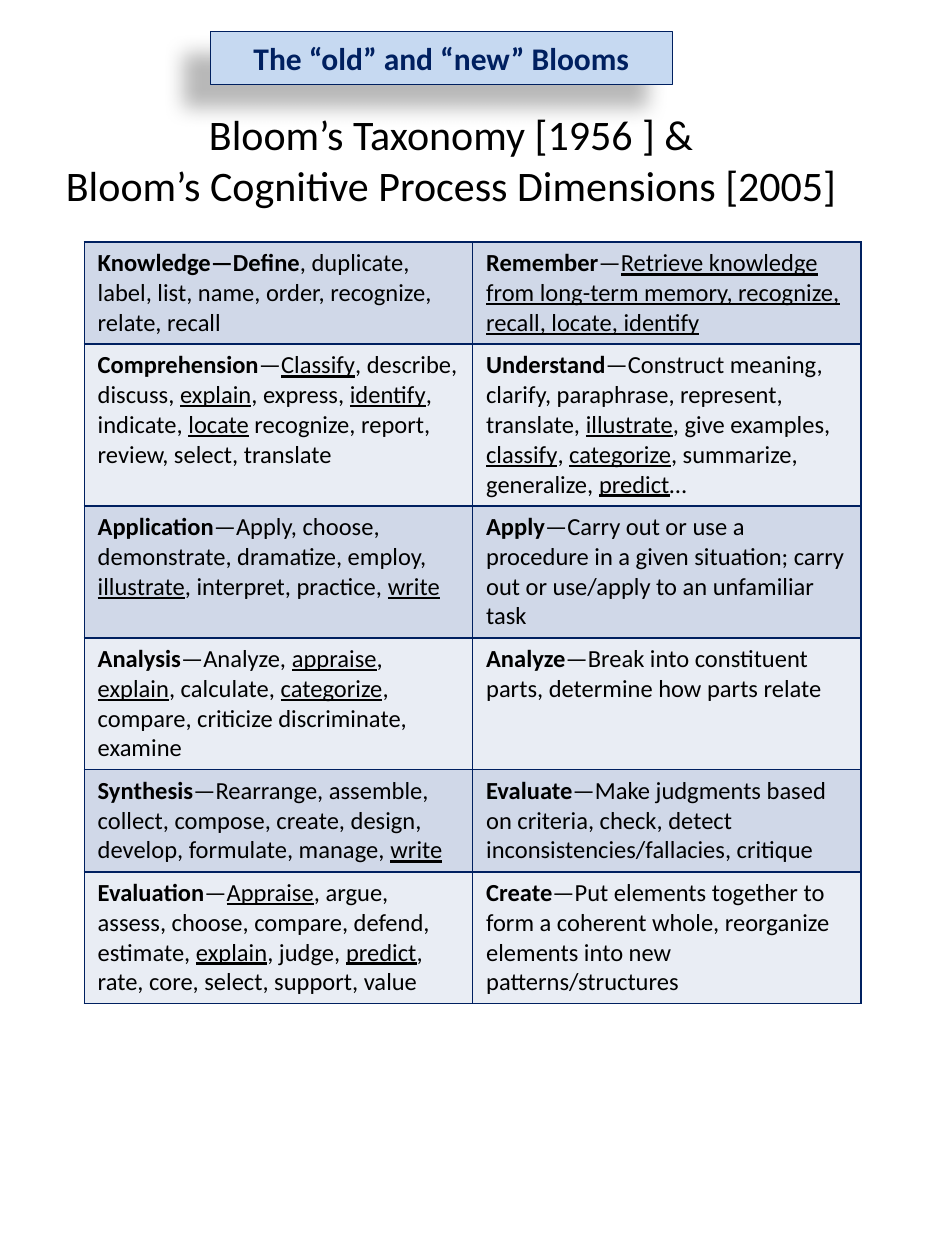
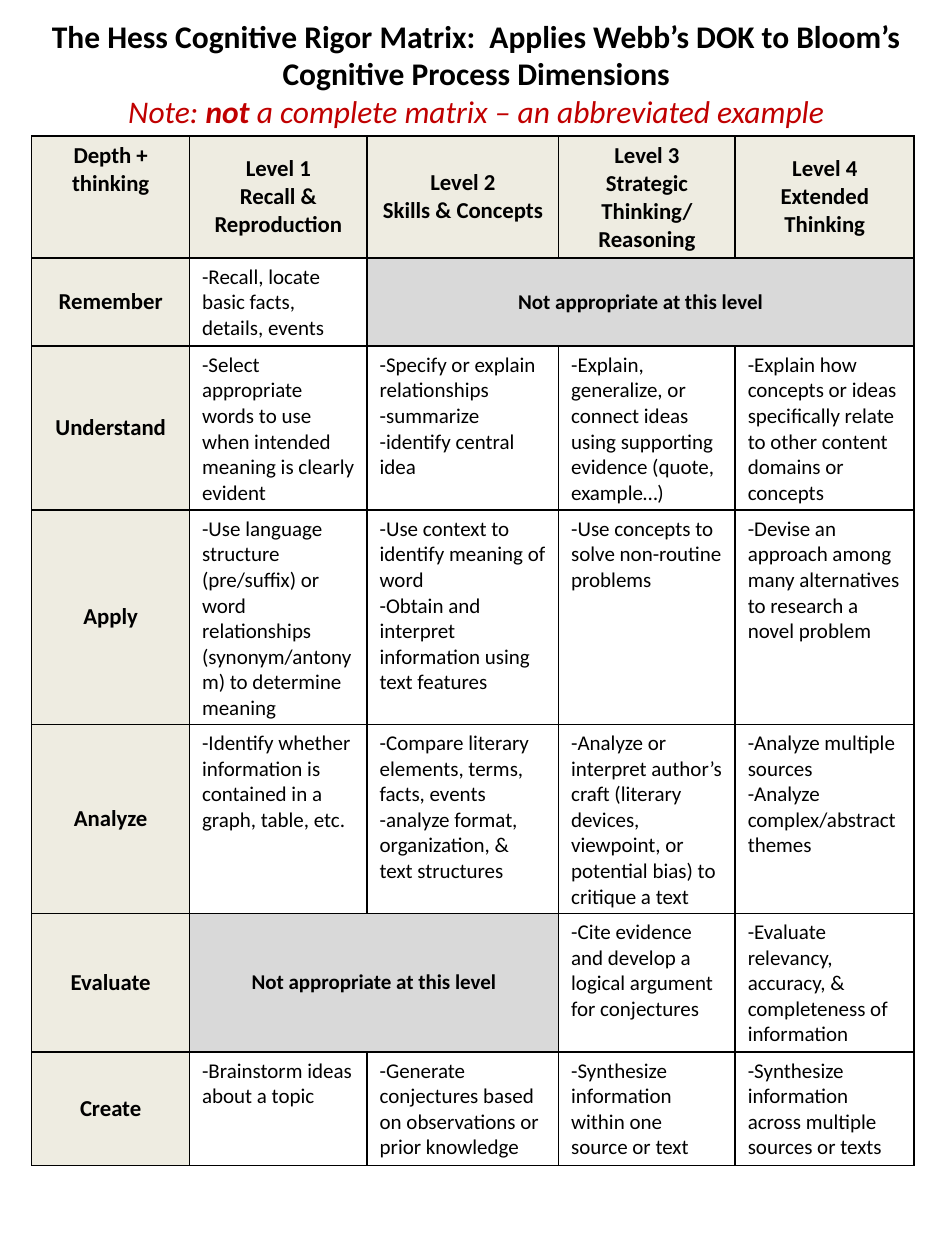
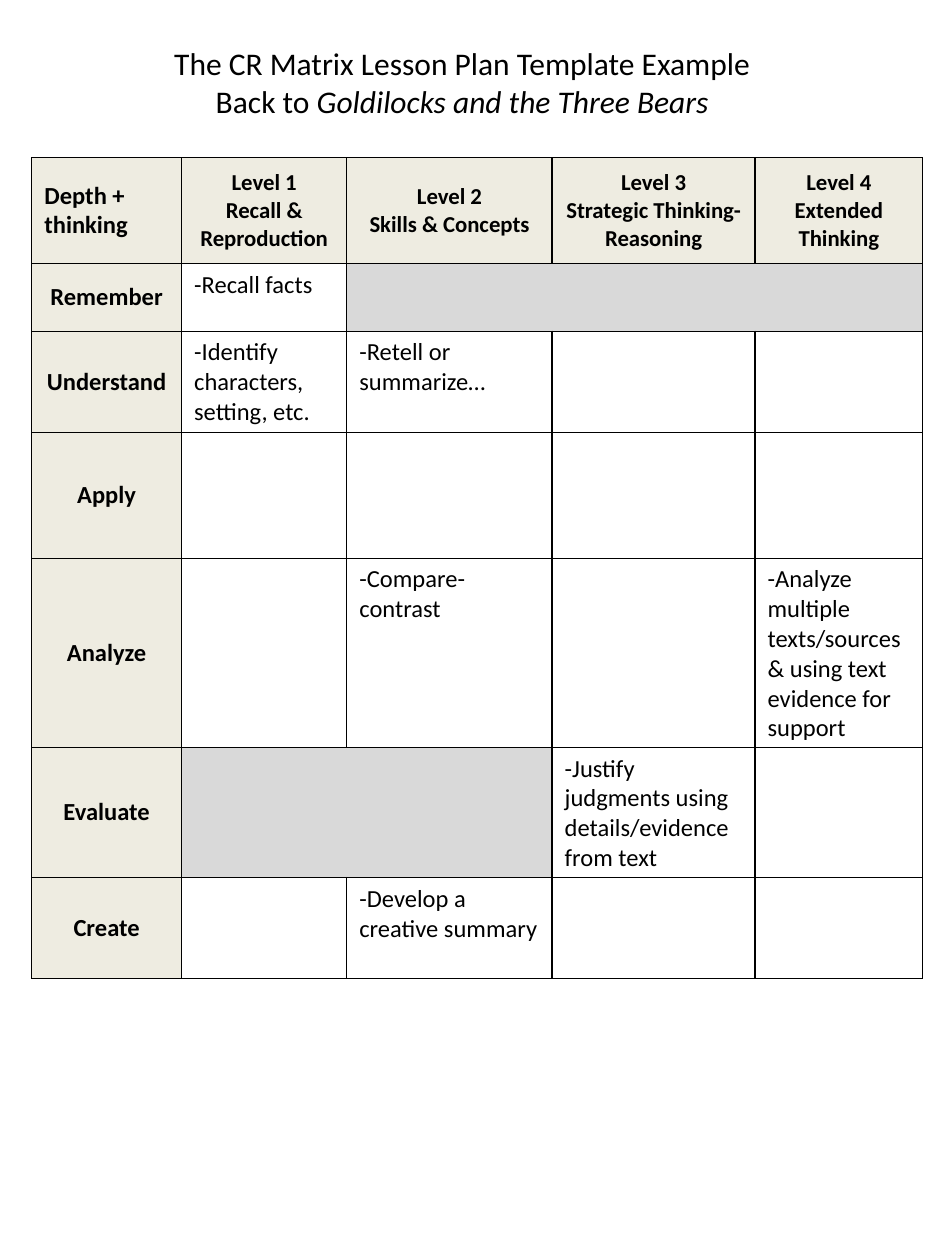
from dataclasses import dataclass
from typing import NamedTuple

from lxml.etree import SubElement
from pptx import Presentation
from pptx.dml.color import RGBColor
from pptx.enum.shapes import MSO_SHAPE
from pptx.enum.text import MSO_ANCHOR as Anchor, PP_ALIGN as Align
from pptx.oxml import parse_xml
from pptx.oxml.ns import nsdecls, qn
from pptx.util import Cm, Pt

FONT = "Calibri"
BLACK = RGBColor(0x00, 0x00, 0x00)
NAVY = RGBColor(0x00, 0x20, 0x60)
RED = RGBColor(0xC0, 0x00, 0x00)
PALE_BLUE = RGBColor(0xC6, 0xD9, 0xF1)
BAND_DARK = RGBColor(0xD0, 0xD8, 0xE8)
BAND_LIGHT = RGBColor(0xE9, 0xED, 0xF4)
CREAM = RGBColor(0xEE, 0xEC, 0xE1)
GREY = RGBColor(0xD9, 0xD9, 0xD9)


class Box(NamedTuple):
    """Left, top, width and height in centimetres."""
    left: float
    top: float
    width: float
    height: float

    def lengths(self) -> list:
        return [Cm(value) for value in self]


class Run(NamedTuple):
    text: str
    bold: bool = False
    italic: bool = False
    underline: bool = False


class Line(NamedTuple):
    runs: list[Run]
    color: RGBColor = BLACK


class Verbs(NamedTuple):
    """A bold lead and its verbs; underscores enclose underlined words."""
    lead: str
    rest: str


@dataclass
class Matrix:
    """A grid of thinking processes (rows) by depth levels (columns)."""
    left: float
    top: float
    widths: list[float]
    heights: list[float]
    head_size: int
    label_size: int
    body_size: int
    corner_anchor: Anchor
    corner_align: Align
    level_3: str
    gap_text: str
    rows: dict[str, list[str]]


# First and last level column that do not apply to a process
GAPS = {"Remember": (2, 4), "Evaluate": (1, 2)}

VERB_ROWS = [
    (Verbs("Knowledge—Define", ", duplicate, label, list, name, order, recognize, relate, recall"),
     Verbs("Remember", "—_Retrieve knowledge from long-term memory, recognize, recall, locate, identify_")),
    (Verbs("Comprehension", "—_Classify_, describe, discuss, _explain_, express, _identify_, "
           "indicate, _locate_ recognize, report, review, select, translate"),
     Verbs("Understand", "—Construct meaning, clarify, paraphrase, represent, translate, _illustrate_, "
           "give examples, _classify_, _categorize_, summarize, generalize, _predict_…")),
    (Verbs("Application", "—Apply, choose, demonstrate, dramatize, employ, _illustrate_, "
           "interpret, practice, _write_"),
     Verbs("Apply", "—Carry out or use a procedure in a given situation; "
           "carry out or use/apply to an unfamiliar task")),
    (Verbs("Analysis", "—Analyze, _appraise_, _explain_, calculate, _categorize_, "
           "compare, criticize discriminate, examine"),
     Verbs("Analyze", "—Break into constituent parts, determine how parts relate")),
    (Verbs("Synthesis", "—Rearrange, assemble, collect, compose, create, design, develop, "
           "formulate, manage, _write_"),
     Verbs("Evaluate", "—Make judgments based on criteria, check, detect "
           "inconsistencies/fallacies, critique")),
    (Verbs("Evaluation", "—_Appraise_, argue, assess, choose, compare, defend, estimate, _explain_, "
           "judge, _predict_, rate, core, select, support, value"),
     Verbs("Create", "—Put elements together to form a coherent whole, "
           "reorganize elements into new patterns/structures")),
]

RIGOR_MATRIX = Matrix(
    left=0.64, top=2.74,
    widths=[3.18, 3.58, 3.86, 3.56, 3.61],
    heights=[1.96, 1.3, 2.31, 2.82, 2.31, 1.83, 1.91],
    head_size=13, label_size=13, body_size=12,
    corner_anchor=Anchor.TOP, corner_align=Align.CENTER,
    level_3="Strategic Thinking/ Reasoning",
    gap_text="Not appropriate at this level",
    rows={
        "Remember": ["-Recall, locate basic facts, details, events", "", "", ""],
        "Understand": [
            "-Select appropriate words to use when intended meaning is clearly evident",
            "-Specify or explain relationships\n-summarize\n-identify central idea",
            "-Explain, generalize, or connect ideas using supporting evidence (quote, example…)",
            "-Explain how concepts or ideas specifically relate to other content domains or concepts"],
        "Apply": [
            "-Use language structure (pre/suffix) or word relationships (synonym/antonym) to determine meaning",
            "-Use context to identify meaning of word\n"
            "-Obtain and interpret information using text features",
            "-Use concepts to solve non-routine problems",
            "-Devise an approach among many alternatives to research a novel problem"],
        "Analyze": [
            "-Identify whether information is contained in a graph, table, etc.",
            "-Compare literary elements, terms, facts, events\n"
            "-analyze format, organization, & text structures",
            "-Analyze or interpret author’s craft (literary devices, viewpoint, or potential bias) "
            "to critique a text",
            "-Analyze multiple sources\n-Analyze complex/abstract themes"],
        "Evaluate": [
            "", "",
            "-Cite evidence and develop a logical argument for conjectures",
            "-Evaluate relevancy, accuracy, & completeness of information"],
        "Create": [
            "-Brainstorm ideas about a topic",
            "-Generate conjectures based on observations or prior knowledge",
            "-Synthesize information within one source or text",
            "-Synthesize information across multiple sources or texts"],
    })

LESSON_MATRIX = Matrix(
    left=0.64, top=3.18,
    widths=[3.02, 3.33, 4.14, 4.09, 3.38],
    heights=[2.13, 1.37, 2.03, 2.54, 3.25, 2.51, 2.03],
    head_size=13, label_size=14, body_size=14,
    corner_anchor=Anchor.MIDDLE, corner_align=Align.LEFT,
    level_3="Strategic Thinking- Reasoning",
    gap_text="",
    rows={
        "Remember": ["-Recall facts", "", "", ""],
        "Understand": ["-Identify characters, setting, etc.", "-Retell or summarize…", "", ""],
        "Apply": ["", "", "", ""],
        "Analyze": ["", "-Compare-contrast", "",
                    "-Analyze multiple texts/sources & using text evidence for support"],
        "Evaluate": ["", "", "-Justify judgments using details/evidence from text", ""],
        "Create": ["", "-Develop a creative summary", "", ""],
    })


def style_paragraph(p, size: int, color: RGBColor = BLACK, align: Align = Align.LEFT) -> None:
    p.alignment = align
    p.font.name = FONT
    p.font.size = Pt(size)
    p.font.color.rgb = color


def add_runs(p, runs: list[Run]) -> None:
    for run in runs:
        r = p.add_run()
        r.text = run.text
        r.font.bold = run.bold
        r.font.italic = run.italic
        r.font.underline = run.underline


def add_title(slide, box: Box, size: int, lines: list[Line],
              anchor: Anchor = Anchor.MIDDLE, inset_top: float = 0.13) -> None:
    tf = slide.shapes.add_textbox(*box.lengths()).text_frame
    tf.word_wrap = True
    tf.vertical_anchor = anchor
    tf.margin_top = Cm(inset_top)
    for i, line in enumerate(lines):
        p = tf.add_paragraph() if i else tf.paragraphs[0]
        style_paragraph(p, size, line.color, Align.CENTER)
        add_runs(p, line.runs)


def add_banner(slide, box: Box, text: str) -> None:
    sp = slide.shapes.add_shape(MSO_SHAPE.RECTANGLE, *box.lengths())
    sp.fill.solid()
    sp.fill.fore_color.rgb = PALE_BLUE
    sp.line.color.rgb = NAVY
    sp.line.width = Pt(0.75)
    sp.shadow.inherit = False
    effects = sp.element.spPr.find(qn("a:effectLst"))
    effects.append(parse_xml(
        f'<a:outerShdw {nsdecls("a")} blurRad="{Pt(11.8)}" dist="{Pt(19.7)}" dir="{141 * 60000}" '
        f'algn="ctr" rotWithShape="0"><a:srgbClr val="{BLACK}"><a:alpha val="28000"/>'
        '</a:srgbClr></a:outerShdw>'))
    p = sp.text_frame.paragraphs[0]
    p.text = text
    style_paragraph(p, 18, NAVY, Align.CENTER)
    p.font.bold = True


def set_borders(cell, color: RGBColor) -> None:
    tc_pr = cell._tc.get_or_add_tcPr()
    for i, side in enumerate(("lnL", "lnR", "lnT", "lnB")):
        ln = SubElement(tc_pr, qn(f"a:{side}"), w=str(Pt(1)))
        fill = SubElement(ln, qn("a:solidFill"))
        SubElement(fill, qn("a:srgbClr"), val=str(color))
        tc_pr.insert(i, ln)


def add_grid(slide, left: float, top: float, widths: list[float], heights: list[float],
             border: RGBColor):
    box = Box(left, top, sum(widths), sum(heights))
    table = slide.shapes.add_table(len(heights), len(widths), *box.lengths()).table
    table.first_row = table.horz_banding = False
    for column, width in zip(table.columns, widths):
        column.width = Cm(width)
    for row, height in zip(table.rows, heights):
        row.height = Cm(height)
    for cell in table.iter_cells():
        cell.fill.background()
        set_borders(cell, border)
    return table


def fill_cell(cell, color: RGBColor) -> None:
    cell.fill.solid()
    cell.fill.fore_color.rgb = color


def write_cell(cell, text: str, size: int, bold: bool = False,
               align: Align = Align.LEFT, anchor: Anchor = Anchor.TOP) -> None:
    """Newlines start paragraphs; vertical tabs break lines."""
    cell.text = text
    cell.vertical_anchor = anchor
    for p in cell.text_frame.paragraphs:
        style_paragraph(p, size, align=align)
        p.font.bold = bold


def add_verb_table(slide) -> None:
    table = add_grid(slide, 1.7, 4.88, [7.83] * 2, [1.55, 2.49, 1.93, 1.93, 1.93, 2.03], NAVY)
    for i, row in enumerate(VERB_ROWS):
        for j, verbs in enumerate(row):
            cell = table.cell(i, j)
            fill_cell(cell, BAND_LIGHT if i % 2 else BAND_DARK)
            cell.margin_left = cell.margin_right = Cm(0.27)
            p = cell.text_frame.paragraphs[0]
            style_paragraph(p, 14)
            parts = enumerate(verbs.rest.split("_"))
            add_runs(p, [Run(verbs.lead, bold=True)]
                     + [Run(part, underline=k % 2 == 1) for k, part in parts if part])


def add_matrix(slide, m: Matrix) -> None:
    table = add_grid(slide, m.left, m.top, m.widths, m.heights, BLACK)
    heads = ["Level 1\vRecall & Reproduction", "Level 2\vSkills & Concepts",
             f"Level 3\n{m.level_3}", "Level 4\nExtended Thinking"]

    corner = table.cell(0, 0)
    fill_cell(corner, CREAM)
    write_cell(corner, "Depth +\nthinking", m.label_size, True, m.corner_align, m.corner_anchor)
    for j, head in enumerate(heads, start=1):
        fill_cell(table.cell(0, j), CREAM)
        write_cell(table.cell(0, j), head, m.head_size, True, Align.CENTER, Anchor.MIDDLE)

    for i, (process, entries) in enumerate(m.rows.items(), start=1):
        label = table.cell(i, 0)
        fill_cell(label, CREAM)
        write_cell(label, process, m.label_size, True, Align.CENTER, Anchor.MIDDLE)
        for j, entry in enumerate(entries, start=1):
            write_cell(table.cell(i, j), entry, m.body_size)
        if process in GAPS:
            first, last = GAPS[process]
            gap = table.cell(i, first)
            gap.merge(table.cell(i, last))
            fill_cell(gap, GREY)
            write_cell(gap, m.gap_text, m.body_size, True, Align.CENTER, Anchor.MIDDLE)


def main() -> None:
    prs = Presentation()
    prs.slide_width, prs.slide_height = Cm(19.05), Cm(25.4)
    blooms, rigor, lesson = (prs.slides.add_slide(prs.slide_layouts[6]) for _ in range(3))

    add_verb_table(blooms)
    add_title(blooms, Box(0.84, 1.35, 16.51, 2.51), 24, [
        Line([Run("Bloom’s Taxonomy [1956 ] &")]),
        Line([Run("Bloom’s Cognitive Process Dimensions [2005]")]),
    ], Anchor.TOP, inset_top=0.84)
    add_banner(blooms, Box(4.24, 0.64, 9.32, 1.07), "The “old” and “new” Blooms")

    add_matrix(rigor, RIGOR_MATRIX)
    add_title(rigor, Box(0.08, 0.41, 19.05, 2.13), 18, [
        Line([Run("The Hess Cognitive Rigor Matrix:  Applies Webb’s DOK to Bloom’s "
                  "Cognitive Process Dimensions", bold=True)]),
        Line([Run("Note: ", italic=True), Run("not", bold=True, italic=True),
              Run(" a complete matrix – an abbreviated example", italic=True)], RED),
    ])

    add_matrix(lesson, LESSON_MATRIX)
    add_title(lesson, Box(0.43, 0.48, 17.78, 2.34), 18, [
        Line([Run("The CR Matrix Lesson Plan Template Example")]),
        Line([Run("Back to "), Run("Goldilocks and the Three Bears", italic=True)]),
    ])

    prs.save("out.pptx")


if __name__ == "__main__":
    main()
